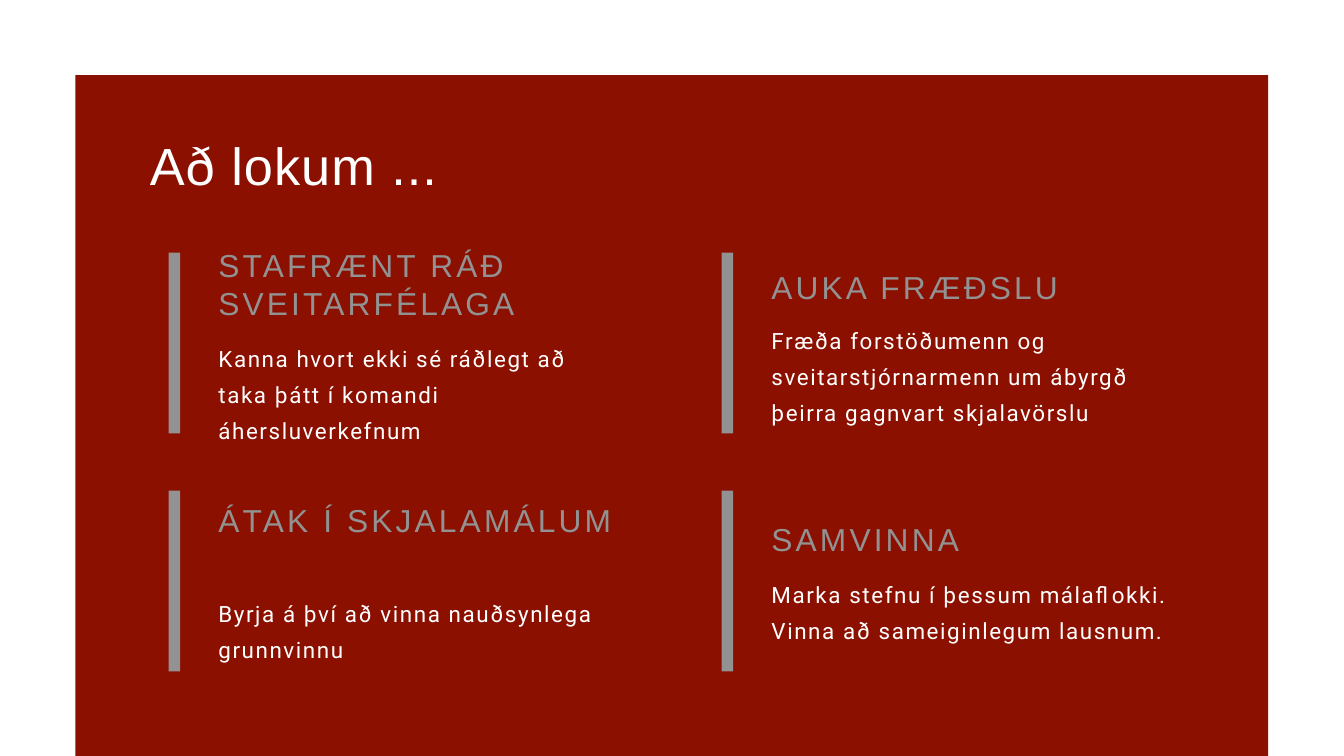
from pptx import Presentation
from pptx.dml.color import RGBColor
from pptx.enum.shapes import MSO_SHAPE
from pptx.enum.text import MSO_AUTO_SIZE
from pptx.util import Inches, Pt

COLORS = {"panel": "8B1000", "accent": "929292", "text": "FFFFFF"}

prs = Presentation()
prs.slide_width = Inches(20)
prs.slide_height = Inches(11.25)
s = prs.slides.add_slide(prs.slide_layouts[6])


def add_text(text, *, left, top, width, height, size, line, spacing,
             font="Arial", color="text"):
    """Add a margin-free text box; size, line and letter spacing are in points."""
    box = s.shapes.add_textbox(Inches(left), Inches(top), Inches(width), Inches(height))
    tf = box.text_frame
    tf.word_wrap = True
    tf.auto_size = MSO_AUTO_SIZE.SHAPE_TO_FIT_TEXT
    tf.margin_left = tf.margin_right = tf.margin_top = tf.margin_bottom = 0
    p = tf.paragraphs[0]
    p.line_spacing = Pt(line)
    r = p.add_run()
    r.text = text
    r.font.name = font
    r.font.size = Pt(size)
    r.font.color.rgb = RGBColor.from_string(COLORS[color])
    r._r.get_or_add_rPr().set("spc", str(round(spacing * 100)))


def add_rect(left, top, width, height, color):
    sp = s.shapes.add_shape(MSO_SHAPE.RECTANGLE, Inches(left), Inches(top),
                            Inches(width), Inches(height))
    sp.shadow.inherit = False
    sp.fill.solid()
    sp.fill.fore_color.rgb = RGBColor.from_string(COLORS[color])
    sp.line.fill.background()


add_rect(1.12, 1.12, 17.75, 10.47, "panel")
add_text("Að lokum ...", left=2.23, top=1.9, width=15.55, height=1.01,
         size=56, line=73.4, spacing=1.1)

# Bar left edge and text width of each column; bar top of each row
columns = [(2.51, 5.92), (10.74, 6.01)]
rows = [3.76, 7.3]
text_offset = 0.74

# Column, row, heading, heading top and height, body, body top and height
points = [
    (0, 0, "STAFRÆNT RÁÐ SVEITARFÉLAGA", 3.66, 1.14,
     "Kanna hvort ekki sé ráðlegt að taka þátt í komandi áhersluverkefnum", 5, 1.55),
    (0, 1, "ÁTAK Í SKJALAMÁLUM", 7.46, 1.14,
     "Byrja á því að vinna nauðsynlega grunnvinnu", 8.8, 1.02),
    (1, 0, "AUKA FRÆÐSLU", 3.99, 0.57,
     "Fræða forstöðumenn og sveitarstjórnarmenn um ábyrgð þeirra gagnvart skjalavörslu",
     4.74, 1.55),
    (1, 1, "SAMVINNA", 7.74, 0.57,
     "Marka stefnu í þessum málaflokki. Vinna að sameiginlegum lausnum.", 8.52, 1.02),
]

for col, row, heading, heading_top, heading_height, body, body_top, body_height in points:
    bar_left, width = columns[col]
    left = bar_left + text_offset
    add_rect(bar_left, rows[row], 0.17, 2.69, "accent")
    add_text(heading, left=left, top=heading_top, width=width, height=heading_height,
             size=34, line=40.8, spacing=3.4, color="accent")
    add_text(body, left=left, top=body_top, width=width, height=body_height,
             size=24, line=38.4, spacing=1.7, font="Roboto")

prs.save("out.pptx")
